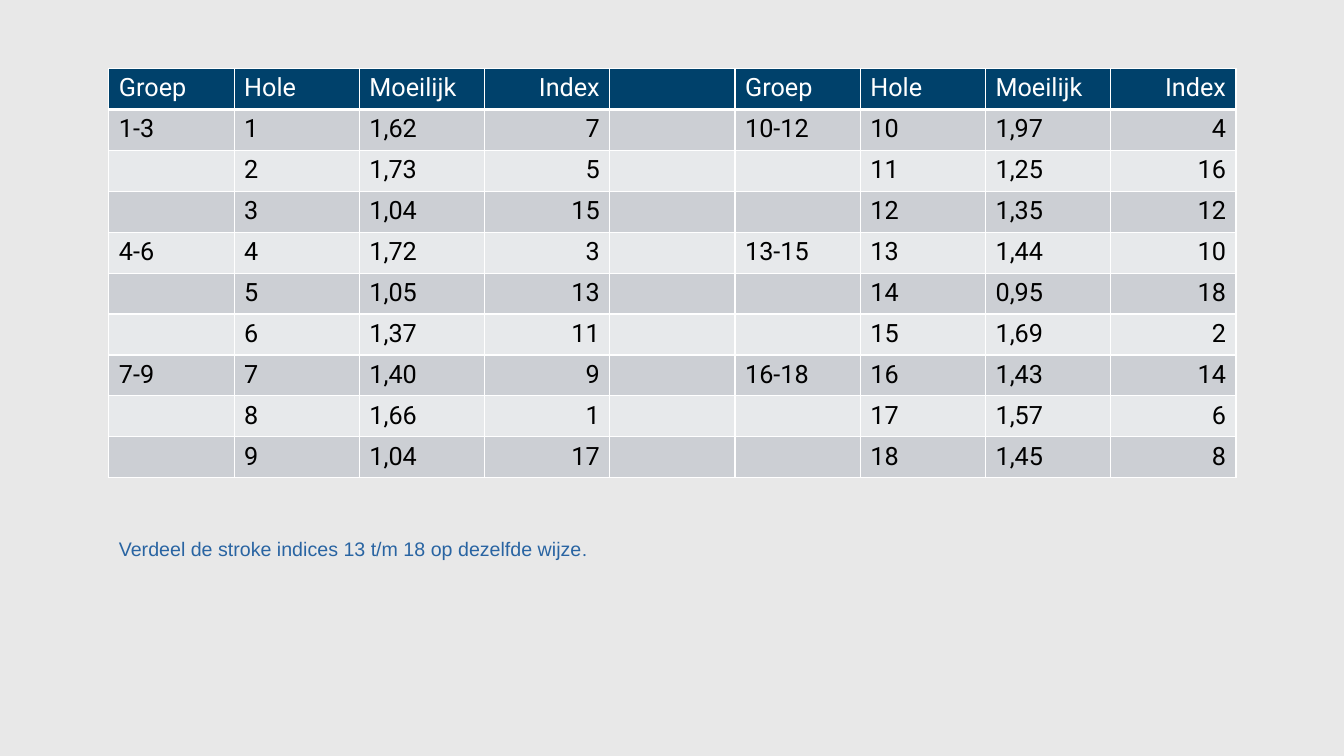
from lxml import etree
from pptx import Presentation
from pptx.dml.color import RGBColor
from pptx.enum.text import PP_ALIGN
from pptx.oxml.ns import qn
from pptx.util import Inches, Pt

# Content: (difficulty, stroke index) per hole, in order
HEADS = ["Groep", "Hole", "Moeilijk", "Index"]
HOLES = [
    ("1,62", 7), ("1,73", 5), ("1,04", 15),
    ("1,72", 3), ("1,05", 13), ("1,37", 11),
    ("1,40", 9), ("1,66", 1), ("1,04", 17),
    ("1,97", 4), ("1,25", 16), ("1,35", 12),
    ("1,44", 10), ("0,95", 18), ("1,69", 2),
    ("1,43", 14), ("1,57", 6), ("1,45", 8),
]
NOTE = [("Verdeel de stroke indices 13 t/m 18 op dezelfde wijze", "Arial"),
        (".", "Roboto")]
COLORS = {"back": "E8E8E8", "head": "00416B", "odd": "CCCFD4", "even": "E7E9EB",
          "line": "FFFFFF", "title": "FFFFFF", "body": "000000", "note": "2964A2"}
LEFT, WIDTH = 1.08, 11.18
TOP, ROW = 0.68, 0.406
HALF, GROUP = 9, 3


def color(name):
    return RGBColor.from_string(COLORS[name])


def write(para, text, font, size, name):
    run = para.add_run()
    run.text = text
    run.font.name = font
    run.font.size = Pt(size)
    run.font.bold = False
    run.font.color.rgb = color(name)


def border(cell, widths):
    props = cell._tc.get_or_add_tcPr()
    for side, width in zip("LRTB", widths):
        line = etree.SubElement(props, qn(f"a:ln{side}"), w=str(Pt(width)))
        fill = etree.SubElement(line, qn("a:solidFill"))
        etree.SubElement(fill, qn("a:srgbClr"), val=COLORS["line"])


def entry(hole):
    first = hole % GROUP == 1
    group = f"{hole}-{hole + GROUP - 1}" if first else ""
    level, index = HOLES[hole - 1]
    return [group, str(hole), level, str(index)]


# Both halves of the course side by side, with an empty column between
rows = [HEADS + [""] + HEADS]
rows += [entry(n) + [""] + entry(n + HALF) for n in range(1, HALF + 1)]

prs = Presentation()
prs.slide_width, prs.slide_height = Inches(13.33), Inches(7.5)
slide = prs.slides.add_slide(prs.slide_layouts[6])
slide.background.fill.solid()
slide.background.fill.fore_color.rgb = color("back")

# Table
cols = len(rows[0])
table = slide.shapes.add_table(len(rows), cols, Inches(LEFT), Inches(TOP),
                               Inches(WIDTH), Inches(ROW * len(rows))).table
for col in table.columns:
    col.width = Inches(WIDTH / cols)
for r, row in enumerate(rows):
    table.rows[r].height = Inches(ROW)
    shade = "head" if r == 0 else "odd" if r % 2 else "even"
    for c, text in enumerate(row):
        cell = table.cell(r, c)
        border(cell, (1, 1, 3 if r == 1 else 1, 3 if r == 0 else 1))
        cell.fill.solid()
        cell.fill.fore_color.rgb = color(shade)
        para = cell.text_frame.paragraphs[0]
        if c % 5 == 3:
            para.alignment = PP_ALIGN.RIGHT
        if text:
            write(para, text, "Roboto", 18, "body" if r else "title")

# Note below the table
box = slide.shapes.add_textbox(Inches(LEFT), Inches(5.28), Inches(WIDTH), Inches(0.34))
box.text_frame.word_wrap = True
for text, font in NOTE:
    write(box.text_frame.paragraphs[0], text, font, 14, "note")

prs.save("out.pptx")
